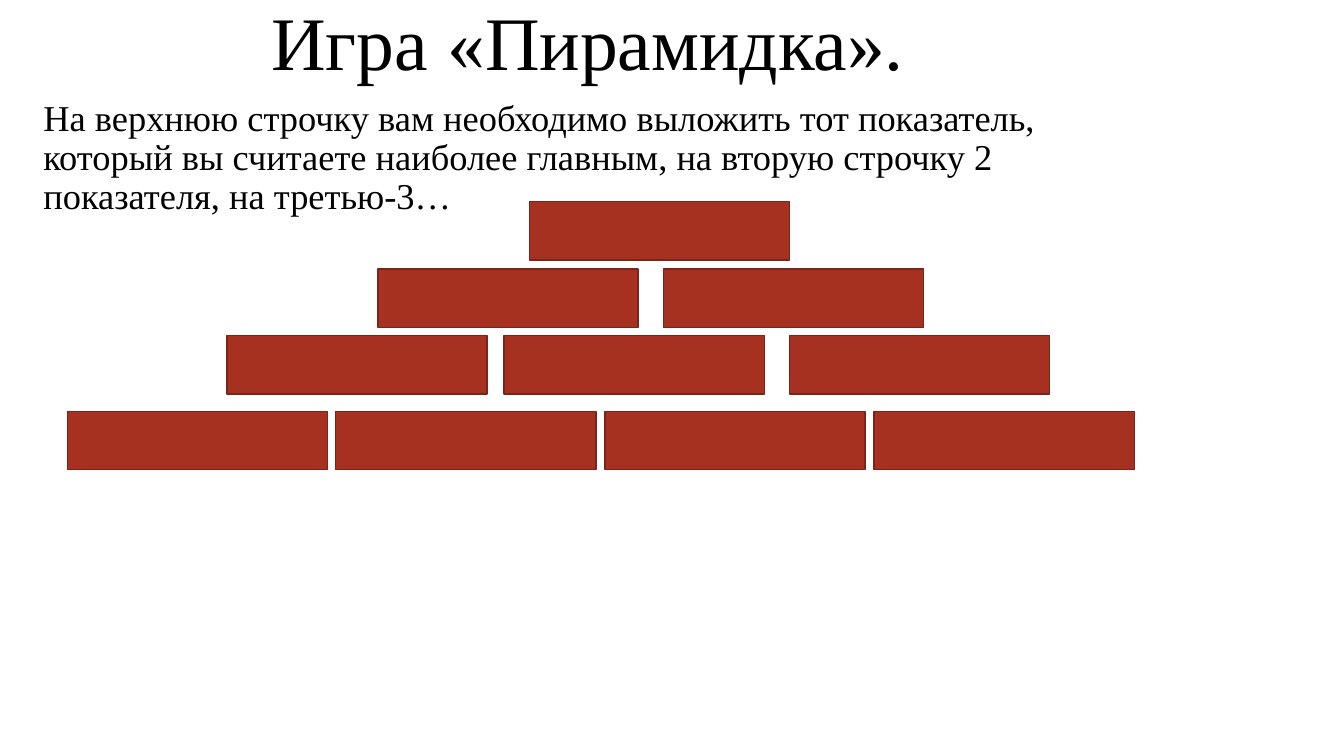
import pptx
import pptx.util
import pptx.dml.color
import pptx.enum.shapes
import pptx.enum.text

Inches = pptx.util.Inches
Pt = pptx.util.Pt
Color = pptx.dml.color.RGBColor.from_string
Align = pptx.enum.text.PP_ALIGN

theme = {
    "font": "Times New Roman",
    "ink": Color("000000"),
    "brick": Color("A63121"),
    "edge": Color("7B2418"),
    "title": Pt(54),
    "body": Pt(26),
}

deck = pptx.Presentation()
deck.slide_width = Inches(13.33)
deck.slide_height = Inches(7.5)
slide = deck.slides.add_slide(deck.slide_layouts[0])

rules = (
    "На верхнюю строчку вам необходимо выложить тот показатель, "
    "который вы считаете наиболее главным, на вторую строчку 2 "
    "показателя, на третью-3…"
)
texts = [
    (slide.shapes.title, 0, 0.94, "Игра «Пирамидка».", "title", Align.CENTER),
    (slide.placeholders[1], 0.94, 3.06, rules, "body", Align.LEFT),
]
for box, top, high, words, role, align in texts:
    box.left, box.top = Inches(0.33), Inches(top)
    box.width, box.height = Inches(11), Inches(high)
    frame = box.text_frame
    frame.text = words
    frame.word_wrap = True
    frame.auto_size = pptx.enum.text.MSO_AUTO_SIZE.NONE
    frame.vertical_anchor = pptx.enum.text.MSO_ANCHOR.TOP
    para = frame.paragraphs[0]
    para.alignment = align
    para.line_spacing = 0.9
    para.space_before = Pt(0)
    para.font.name = theme["font"]
    para.font.size = theme[role]
    para.font.color.rgb = theme["ink"]

rows = [
    (2, [5.25]),
    (2.67, [3.75, 6.58]),
    (3.33, [2.25, 5, 7.83]),
    (4.08, [0.67, 3.33, 6, 8.67]),
]
wall = slide.shapes.add_group_shape()
for top, lefts in rows:
    for left in lefts:
        brick = wall.shapes.add_shape(
            pptx.enum.shapes.MSO_SHAPE.RECTANGLE,
            Inches(left), Inches(top), Inches(2.58), Inches(0.58),
        )
        brick.shadow.inherit = False
        brick.fill.solid()
        brick.fill.fore_color.rgb = theme["brick"]
        brick.line.color.rgb = theme["edge"]
        brick.line.width = Pt(1)

deck.save("out.pptx")
